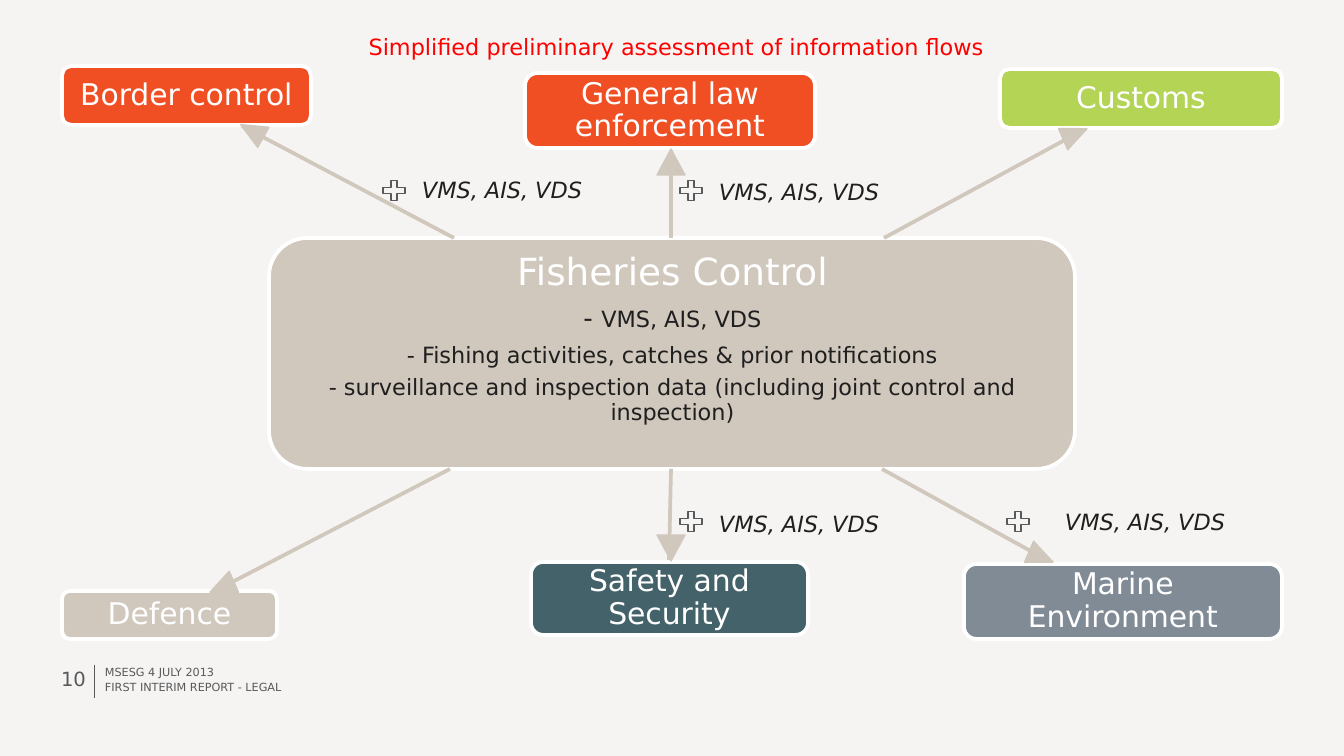
import pptx
import pptx.util
import pptx.dml.color
import pptx.enum.shapes
import pptx.enum.text
import pptx.oxml.ns
import lxml.etree

SHAPE = pptx.enum.shapes.MSO_SHAPE
ALIGN = pptx.enum.text.PP_ALIGN
ANCHOR = pptx.enum.text.MSO_ANCHOR
FONT = "DejaVu Sans"
SAND, WHITE, INK, GREY = "D0C7BD", "FFFFFF", "1F1F1F", "58595B"
PX = 914400 / 134.4

# Content: sizes in points, places in px
TITLE = "Simplified preliminary assessment of information flows"
TITLE_AT = (352, 26, 649, 40)
HUB_AT = (269, 238, 806, 231)
HUB_TEXT_AT = (281, 253, 783, 180)
HUB_TEXT = [  # spans (text, size, colour), space after
    ([("Fisheries Control", 20, WHITE)], 6.5),
    ([("- ", 14, INK), ("VMS, AIS, VDS", 12, INK)], 5.5),
    ([("- Fishing activities, catches & prior notifications", 12, INK)], 4.5),
    ([("- surveillance and inspection data (including joint control and inspection)",
       12, INK)], 0),
]
SECTORS = [  # name, place, fill, line start, line end, head centre, head width, turn
    ("General law enforcement", (525, 73, 290, 75), "F04E23",
     (671, 238), (671, 148), (671, 162), 28, 0),
    ("Customs", (1000, 69, 282, 59), "B3D455",
     (884, 238), (1087, 128), (1075, 134), 23, 66.5),
    ("Marine Environment", (964, 564, 318, 75), "818B96",
     (882, 469), (1054, 564), (1041, 557), 23, 113.4),
    ("Safety and Security", (531, 562, 277, 73), "44626A",
     (671, 469), (669, 562), (671, 548), 28, 180),
    ("Defence", (62, 591, 215, 48), SAND,
     (450, 469), (215, 591), (222, 587), 23, 246.4),
    ("Border control", (62, 66, 249, 59), "F04E23",
     (454, 238), (242, 126), (252, 131), 23, 299.4),
]
HEAD_HEIGHT = 26
FLOW = "VMS, AIS, VDS"
FLOWS = [  # plus corner, label corner
    ((379, 177), (409, 169)),
    ((676, 177), (706, 171)),
    ((676, 508), (706, 503)),
    ((1003, 508), (1052, 501)),
]
FOOTER = [  # text, place, size, alignment
    ("MSESG 4 JULY 2013", (105, 669, 288, 9), 6, ALIGN.LEFT),
    ("FIRST INTERIM REPORT - LEGAL", (105, 683, 288, 11), 6, ALIGN.LEFT),
    ("10", (26, 657, 60, 56), 10.5, ALIGN.RIGHT),
]


def px(*values):
    return [pptx.util.Emu(round(value * PX)) for value in values]


def rgb(text):
    return pptx.dml.color.RGBColor.from_string(text)


def apply(target, formats):
    for name, value in formats.items():
        setattr(target, name, value)


def place(shape, at):
    apply(shape, dict(zip(("left", "top", "width", "height"), px(*at))))


def set_frame(frame, insets, anchor):
    sides = ("margin_left", "margin_top", "margin_right", "margin_bottom")
    apply(frame, dict(zip(sides, px(*insets))))
    apply(frame, {"word_wrap": True, "vertical_anchor": anchor,
                  "auto_size": pptx.enum.text.MSO_AUTO_SIZE.NONE})


def add_span(para, text, size, colour, italic=False):
    span = para.add_run()
    span.text = text
    apply(span.font, {"name": FONT, "size": pptx.util.Pt(size),
                      "bold": False, "italic": italic})
    span.font.color.rgb = rgb(colour)


def add_box(at, kind, fill, line, weight):
    box = page.shapes.add_shape(kind, *px(*at))
    box.shadow.inherit = False
    if fill:
        box.fill.solid()
        box.fill.fore_color.rgb = rgb(fill)
    else:
        box.fill.background()
    box.line.color.rgb = rgb(line)
    box.line.width = pptx.util.Pt(weight)
    return box


def add_line(start, end, colour, weight):
    line = page.shapes.add_connector(
        pptx.enum.shapes.MSO_CONNECTOR.STRAIGHT, *px(*start, *end))
    line.line.color.rgb = rgb(colour)
    line.line.width = pptx.util.Pt(weight)
    lxml.etree.SubElement(line._element.spPr, pptx.oxml.ns.qn("a:effectLst"))


deck = pptx.Presentation()
deck.slide_width, deck.slide_height = px(1344, 756)
page = deck.slides.add_slide(deck.slide_layouts[1])
page.background.fill.solid()
page.background.fill.fore_color.rgb = rgb("F6F4F2")

# Title
title = page.shapes.title
place(title, TITLE_AT)
set_frame(title.text_frame, (13, 7, 13, 7), ANCHOR.TOP)
para = title.text_frame.paragraphs[0]
para.alignment = ALIGN.CENTER
add_span(para, TITLE, 12, "FF0000")

# Central box with its list in the body placeholder
add_box(HUB_AT, SHAPE.ROUNDED_RECTANGLE, SAND, WHITE, 2)
body = page.placeholders[1]
page.shapes._spTree.append(body._element)
place(body, HUB_TEXT_AT)
set_frame(body.text_frame, (8, 0, 8, 0), ANCHOR.TOP)
for index, (spans, after) in enumerate(HUB_TEXT):
    para = body.text_frame.add_paragraph() if index else body.text_frame.paragraphs[0]
    props = para._p.get_or_add_pPr()
    apply_indent = {"marL": "0", "indent": "0"}
    for name, value in apply_indent.items():
        props.set(name, value)
    lxml.etree.SubElement(props, pptx.oxml.ns.qn("a:buNone"))
    apply(para, {"alignment": ALIGN.CENTER, "line_spacing": 0.9,
                 "space_before": pptx.util.Pt(0), "space_after": pptx.util.Pt(after)})
    for span in spans:
        add_span(para, *span)

# Sectors and the lines that lead to them
for name, at, fill, start, end, *_ in SECTORS:
    add_line(start, end, SAND, 2)
    box = add_box(at, SHAPE.ROUNDED_RECTANGLE, fill, WHITE, 2)
    set_frame(box.text_frame, (5, 5, 5, 5), ANCHOR.MIDDLE)
    para = box.text_frame.paragraphs[0]
    apply(para, {"alignment": ALIGN.CENTER, "line_spacing": 0.9})
    add_span(para, name, 16, WHITE)

# Flow labels
for plus, corner in FLOWS:
    add_box((*plus, 30, 27), SHAPE.MATH_PLUS, None, GREY, 0.75)
    label = page.shapes.add_textbox(*px(*corner, 203, 40))
    set_frame(label.text_frame, (13, 7, 13, 7), ANCHOR.TOP)
    add_span(label.text_frame.paragraphs[0], FLOW, 12, INK, italic=True)

# Arrowheads
for *_, (x, y), width, turn in SECTORS:
    at = (x - width / 2, y - HEAD_HEIGHT / 2, width, HEAD_HEIGHT)
    head = add_box(at, SHAPE.ISOSCELES_TRIANGLE, SAND, SAND, 0.75)
    head.rotation = turn

# Footer
add_line((94, 665), (94, 698), GREY, 0.25)
for text, at, size, alignment in FOOTER:
    note = page.shapes.add_textbox(*px(*at))
    set_frame(note.text_frame, (0, 0, 0, 0), ANCHOR.MIDDLE)
    para = note.text_frame.paragraphs[0]
    apply(para, {"alignment": alignment, "line_spacing": pptx.util.Pt(6)})
    add_span(para, text, size, GREY)

deck.save("out.pptx")
